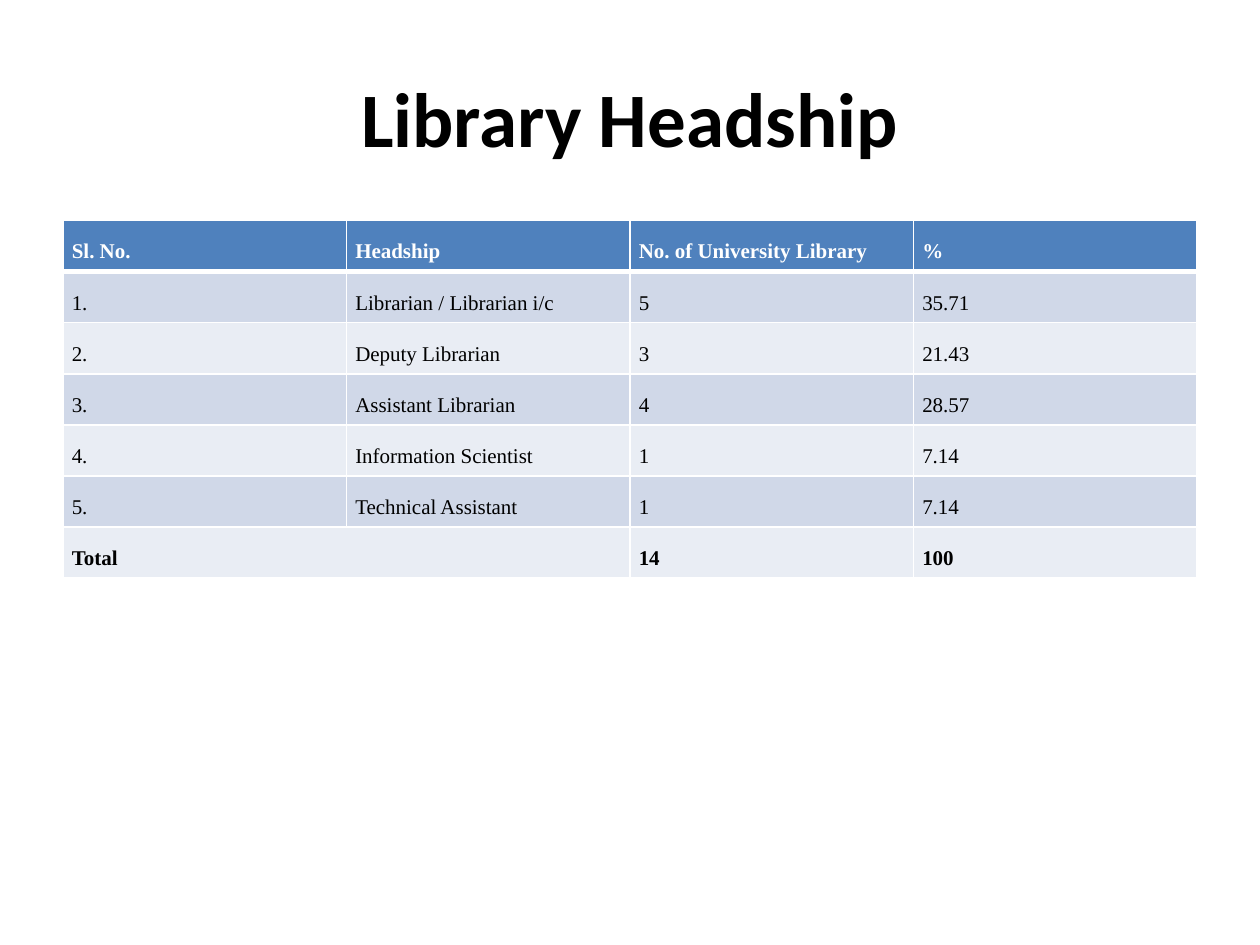
from lxml import etree
from pptx import Presentation
from pptx.dml.color import RGBColor
from pptx.enum.text import MSO_ANCHOR, PP_ALIGN
from pptx.oxml.ns import qn
from pptx.util import Pt

PX = 9144
MIDDLE = MSO_ANCHOR.MIDDLE
CENTER, JUSTIFY = PP_ALIGN.CENTER, PP_ALIGN.JUSTIFY

WHITE = RGBColor(0xFF, 0xFF, 0xFF)
BLACK = RGBColor(0, 0, 0)
HEADER_BLUE = RGBColor(0x4F, 0x81, 0xBD)
BANDS = [RGBColor(0xE9, 0xED, 0xF4), RGBColor(0xD0, 0xD8, 0xE8)]

TITLE = "Library Headship"
ROWS = [
    ("Sl. No.", "Headship", "No. of University Library", "%"),
    ("1.", "Librarian / Librarian i/c", "5", "35.71"),
    ("2.", "Deputy Librarian", "3", "21.43"),
    ("3.", "Assistant Librarian", "4", "28.57"),
    ("4.", "Information Scientist", "1", "7.14"),
    ("5.", "Technical Assistant", "1", "7.14"),
    ("Total", "", "14", "100"),
]
TITLE_BOX = (50, 30, 900, 125)
TABLE_BOX = (50, 175, 900, 284)
CELL = dict(vertical_anchor=MIDDLE, margin_left=7 * PX, margin_right=7 * PX,
            margin_top=0, margin_bottom=0)
PARAGRAPH = dict(alignment=JUSTIFY, line_spacing=1.5,
                 space_before=Pt(6), space_after=Pt(6))


def apply(obj, values):
    for name, value in values.items():
        setattr(obj, name, value)


def write(p, text, color, **font):
    r = p.add_run()
    r.text = text
    apply(r.font, font)
    r.font.color.rgb = color


def add_borders(cell, bottom):
    tc_pr = cell._tc.get_or_add_tcPr()
    for side, width in zip("LRTB", (1, 1, 1, bottom)):
        ln = etree.SubElement(tc_pr, qn(f"a:ln{side}"), w=str(Pt(width)))
        fill = etree.SubElement(ln, qn("a:solidFill"))
        etree.SubElement(fill, qn("a:srgbClr"), val=str(WHITE))


prs = Presentation()
prs.slide_width, prs.slide_height = 1000 * PX, 750 * PX
s = prs.slides.add_slide(prs.slide_layouts[5])

title = s.shapes.title
apply(title, dict(zip(("left", "top", "width", "height"), (v * PX for v in TITLE_BOX))))
title.text_frame.vertical_anchor = MIDDLE
p = title.text_frame.paragraphs[0]
p.alignment = CENTER
write(p, TITLE, BLACK, name="Calibri", size=Pt(44), bold=True)

last = len(ROWS) - 1
table = s.shapes.add_table(len(ROWS), len(ROWS[0]), *(v * PX for v in TABLE_BOX)).table
table.cell(last, 0).merge(table.cell(last, 1))

for i, row in enumerate(ROWS):
    header = i == 0
    for j, text in enumerate(row):
        cell = table.cell(i, j)
        apply(cell, CELL)
        add_borders(cell, 3 if header else 1)
        cell.fill.solid()
        cell.fill.fore_color.rgb = HEADER_BLUE if header else BANDS[i % 2]
        if text:
            p = cell.text_frame.paragraphs[0]
            apply(p, PARAGRAPH)
            write(p, text, WHITE if header else BLACK, name="Times New Roman",
                  size=Pt(12), bold=i in (0, last))

prs.save("out.pptx")
